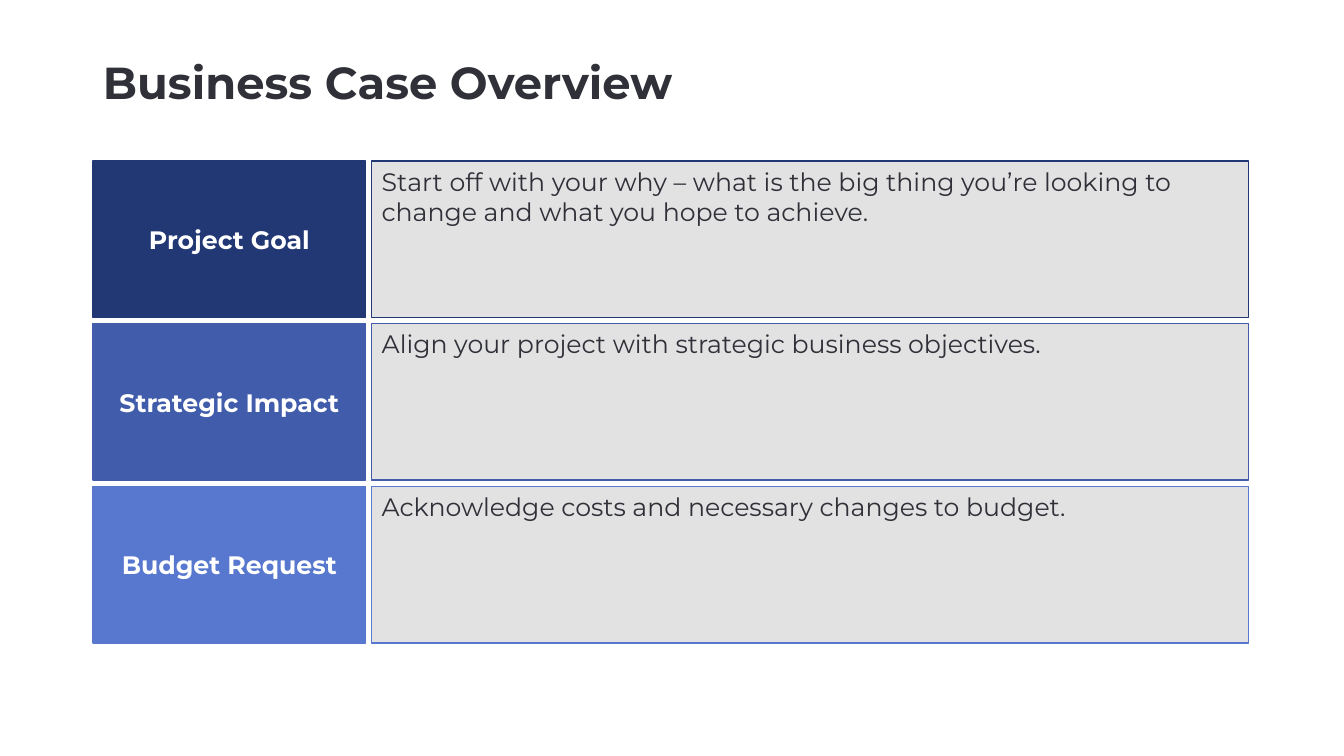
from pptx import Presentation
from pptx.dml.color import RGBColor
from pptx.enum.shapes import MSO_SHAPE
from pptx.enum.text import MSO_ANCHOR, MSO_AUTO_SIZE, PP_ALIGN
from pptx.util import Cm, Pt

RECT = MSO_SHAPE.RECTANGLE
TOP, MIDDLE = MSO_ANCHOR.TOP, MSO_ANCHOR.MIDDLE
LEFT, CENTER = PP_ALIGN.LEFT, PP_ALIGN.CENTER
NO_FIT = MSO_AUTO_SIZE.NONE

COLORS = {
    "navy": "223875",
    "blue": "405CAA",
    "sky": "5877CE",
    "gray": "E2E2E3",
    "ink": "2F3038",
    "white": "FFFFFF",
}
FONT = "Montserrat"
MARGIN, ROW_TOP, ROW_PITCH, ROW_HEIGHT = 2.34, 4.06, 4.1, 3.94
LABEL_WIDTH, DETAIL_LEFT, DETAIL_WIDTH = 6.88, 9.37, 22.1

ROWS = [
    ("Project Goal", "navy",
     "Start off with your why – what is the big thing you’re looking to "
     "change and what you hope to achieve."),
    ("Strategic Impact", "blue",
     "Align your project with strategic business objectives."),
    ("Budget Request", "sky",
     "Acknowledge costs and necessary changes to budget."),
]


class SlideBuilder:
    """Holds the style and the current slide, and adds elements to it."""

    def __init__(self, prs):
        self.s = prs.slides.add_slide(prs.slide_layouts[5])

    def color(self, name):
        return RGBColor.from_string(COLORS[name])

    def add_text(self, sp, text, size, color, bold, align, anchor):
        tf = sp.text_frame
        frame_format = {"word_wrap": True, "auto_size": NO_FIT,
                        "vertical_anchor": anchor}
        for name, value in frame_format.items():
            setattr(tf, name, value)
        p = tf.paragraphs[0]
        p.alignment = align
        r = p.add_run()
        r.text = text
        font_format = {"name": FONT, "size": Pt(size), "bold": bold}
        for name, value in font_format.items():
            setattr(r.font, name, value)
        r.font.color.rgb = self.color(color)
        return p

    def title(self, text, left, top, width, height):
        sp = self.s.shapes.title
        box = {"left": left, "top": top, "width": width, "height": height}
        for name, value in box.items():
            setattr(sp, name, Cm(value))
        p = self.add_text(sp, text, 32, "ink", True, LEFT, MIDDLE)
        p.line_spacing = 0.9

    def box(self, left, top, width, fill, line, text, **text_format):
        sp = self.s.shapes.add_shape(
            RECT, Cm(left), Cm(top), Cm(width), Cm(ROW_HEIGHT))
        sp.shadow.inherit = False
        sp.fill.solid()
        sp.fill.fore_color.rgb = self.color(fill)
        sp.line.color.rgb = self.color(line)
        sp.line.width = Pt(1)
        self.add_text(sp, text, 18, **text_format)

    def row(self, top, label, color, detail):
        self.box(MARGIN, top, LABEL_WIDTH, color, color, label,
                 color="white", bold=True, align=CENTER, anchor=MIDDLE)
        self.box(DETAIL_LEFT, top, DETAIL_WIDTH, "gray", color, detail,
                 color="ink", bold=False, align=LEFT, anchor=TOP)


def main():
    prs = Presentation()
    prs.slide_width, prs.slide_height = Cm(33.87), Cm(19.05)
    builder = SlideBuilder(prs)
    builder.title("Business Case Overview", MARGIN, 1.02, 29.21, 2.26)
    for i, (label, color, detail) in enumerate(ROWS):
        builder.row(ROW_TOP + i * ROW_PITCH, label, color, detail)
    prs.save("out.pptx")


if __name__ == "__main__":
    main()
